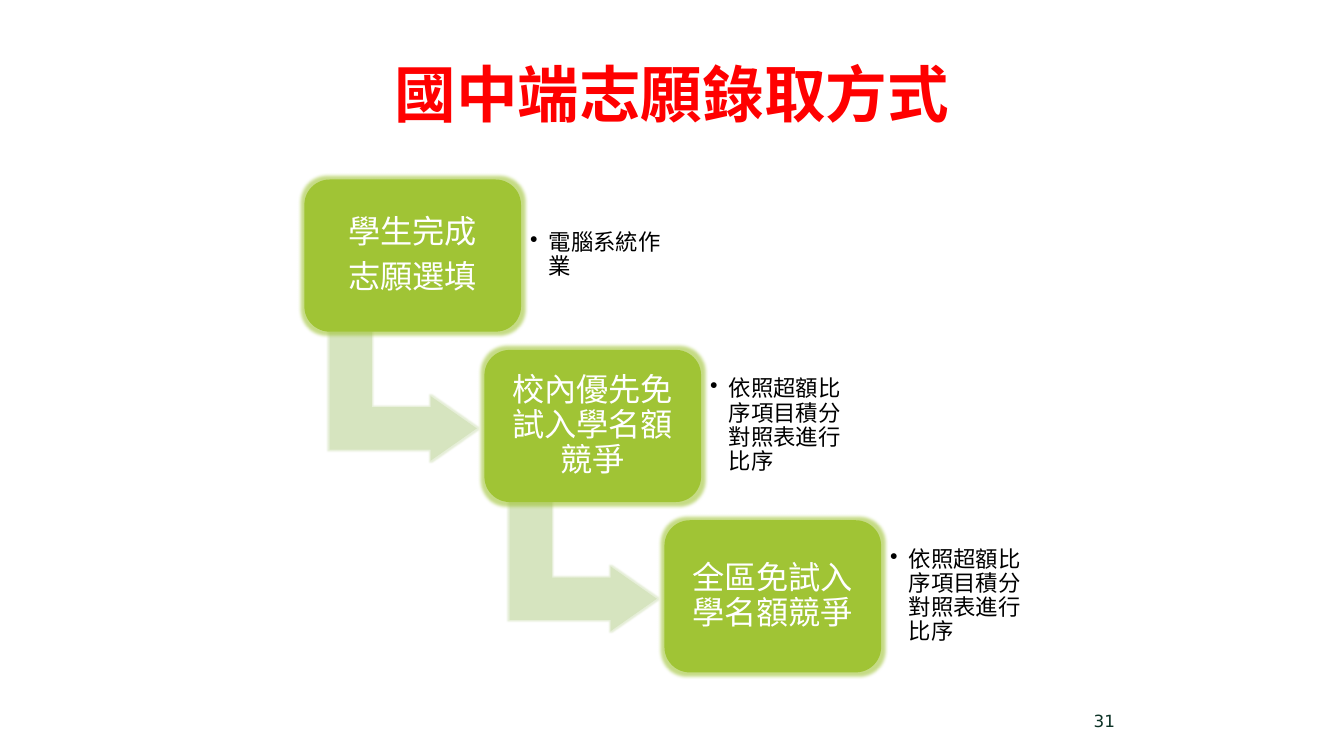
from lxml.etree import SubElement
from pptx import Presentation
from pptx.dml.color import RGBColor
from pptx.enum.shapes import MSO_SHAPE
from pptx.enum.text import MSO_ANCHOR, PP_ALIGN
from pptx.oxml.ns import qn
from pptx.util import Pt

# Content
TITLE = "國中端志願錄取方式"
STEPS = [
    (["學生完成", "志願選填"], "電腦系統作業"),
    (["校內優先免試入學名額競爭"], "依照超額比序項目積分對照表進行比序"),
    (["全區免試入學名額競爭"], "依照超額比序項目積分對照表進行比序"),
]
PAGE = "31"

THEME = {
    "cjk": "Noto Sans CJK SC", "latin": "DejaVu Sans",
    "red": "FF0000", "green": "A0C435", "pale": "D6E4BF",
    "white": "FFFFFF", "black": "000000", "dark": "0C3226",
    "title": 44, "step": 23, "note": 16, "page": 12,
}

# Layout, in points
LEFT, TOP = 217.4, 128.2
BOX_W, BOX_H = 154.8, 108.7
STEP_X, STEP_Y = 128.6, 121.7
ARROW_W, ARROW_H = 92.2, 105.1
ARROW_X, ARROW_Y = 24.5, 102.2
NOTE_W, NOTE_H = 113, 87.8

deck = Presentation()
deck.slide_width, deck.slide_height = Pt(960), Pt(540)
slide = deck.slides.add_slide(deck.slide_layouts[6])


def write(shape, lines, size, color, font="cjk", align=PP_ALIGN.LEFT,
          inset=(7.2, 3.6), space=None, bold=False, bullet=False):
    frame = shape.text_frame
    frame.word_wrap = True
    frame.vertical_anchor = MSO_ANCHOR.MIDDLE
    frame.margin_left = frame.margin_right = Pt(inset[0])
    frame.margin_top = frame.margin_bottom = Pt(inset[1])
    for i, line in enumerate(lines):
        para = frame.add_paragraph() if i else frame.paragraphs[0]
        para.text = line
        para.alignment = align
        props = para._p.get_or_add_pPr()
        if bullet:
            props.set("marL", str(Pt(13.5)))
            props.set("indent", str(Pt(-13.5)))
            SubElement(props, qn("a:buChar"), char="•")
        if space is not None:
            para.line_spacing = 0.9
            para.space_after = Pt(space)
        para.font.size = Pt(THEME[size])
        para.font.bold = bold
        para.font.color.rgb = RGBColor.from_string(THEME[color])
        para.font.name = THEME[font]
        SubElement(props.find(qn("a:defRPr")), qn("a:ea"), typeface=THEME[font])


def label(x, y, w, h, lines, size, color, **style):
    box = slide.shapes.add_textbox(Pt(x), Pt(y), Pt(w), Pt(h))
    write(box, lines, size, color, **style)


def block(kind, x, y, w, h, color, adjust, glow):
    shape = slide.shapes.add_shape(kind, Pt(x), Pt(y), Pt(w), Pt(h))
    for i, value in enumerate(adjust):
        shape.adjustments[i] = value
    shape.shadow.inherit = False
    shape.fill.solid()
    shape.fill.fore_color.rgb = RGBColor.from_string(THEME[color])
    shape.line.fill.background()
    # Soft glow in the fill colour
    effects = shape._element.spPr.find(qn("a:effectLst"))
    halo = SubElement(effects, qn("a:glow"), rad=str(Pt(glow)))
    tint = SubElement(halo, qn("a:srgbClr"), val=THEME[color])
    SubElement(tint, qn("a:alpha"), val="60000")
    return shape


# Title
label(48, 21.6, 864, 90, [TITLE], "title", "red", align=PP_ALIGN.CENTER, bold=True)

# Staircase of steps, each with an arrow to the next
for i, (lines, note) in enumerate(STEPS):
    x, y = LEFT + i * STEP_X, TOP + i * STEP_Y
    if i < len(STEPS) - 1:
        arrow = block(MSO_SHAPE.BENT_UP_ARROW, x + ARROW_X, y + ARROW_Y,
                      ARROW_W, ARROW_H, "pale", (0.328, 0.25, 0.358), 2)
        arrow.rotation = 90
    box = block(MSO_SHAPE.ROUNDED_RECTANGLE, x, y, BOX_W, BOX_H,
                "green", (0.167,), 5)
    write(box, lines, "step", "white", align=PP_ALIGN.CENTER,
          inset=(7.2, 7.2), space=8)
    label(x + BOX_W + 0.6, y + (BOX_H - NOTE_H) / 2, NOTE_W, NOTE_H, [note],
          "note", "black", inset=(5.8, 5.8), space=2.4, bullet=True)

# Page number
label(635.8, 500.4, 167.8, 28.8, [PAGE], "page", "dark",
      font="latin", align=PP_ALIGN.RIGHT)

deck.save("out.pptx")
